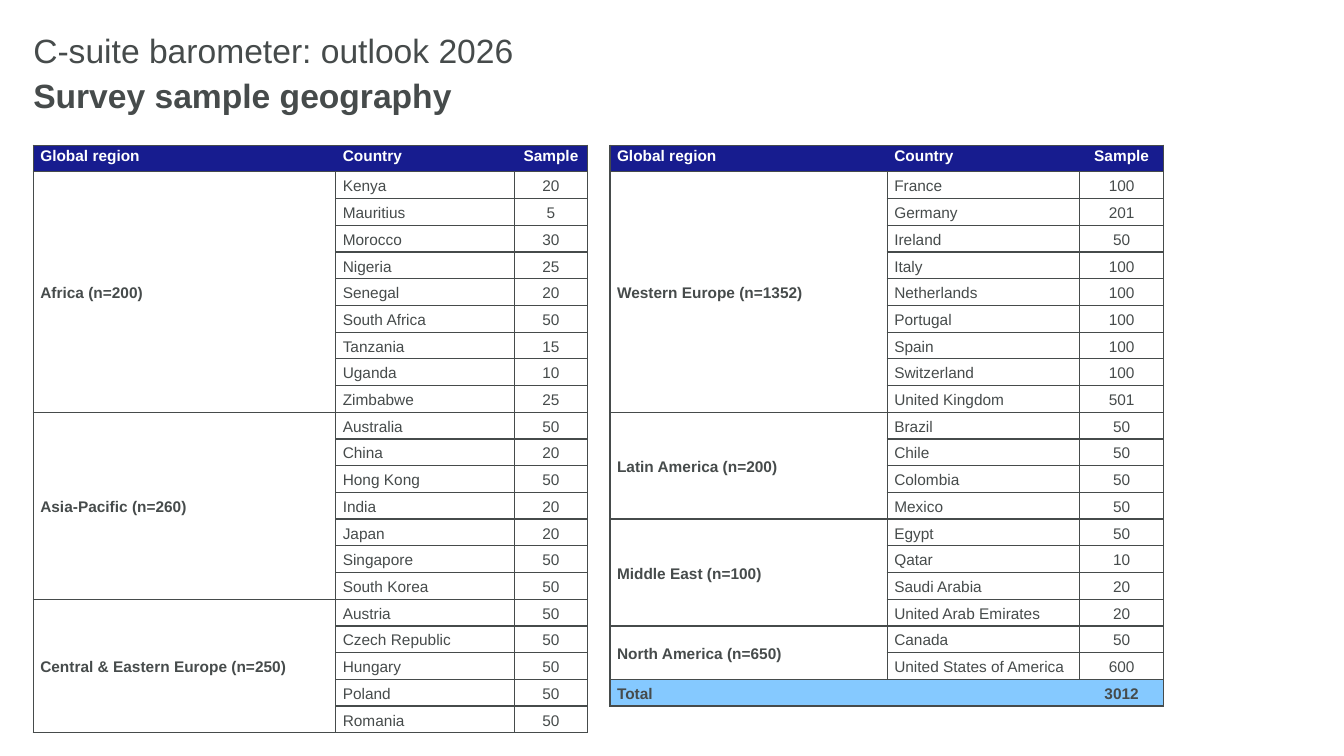
from lxml.etree import SubElement
from pptx import Presentation
from pptx.dml.color import RGBColor
from pptx.enum.text import MSO_ANCHOR, PP_ALIGN
from pptx.oxml.ns import qn
from pptx.util import Inches, Pt

COLORS = {"text": "464B4B", "navy": "171C8F", "sky": "85C9FF", "white": "FFFFFF"}
HEADERS = ("Global region", "Country", "Sample")

LEFT_REGIONS = {
    "Africa (n=200)": {
        "Kenya": 20, "Mauritius": 5, "Morocco": 30, "Nigeria": 25, "Senegal": 20,
        "South Africa": 50, "Tanzania": 15, "Uganda": 10, "Zimbabwe": 25},
    "Asia-Pacific (n=260)": {
        "Australia": 50, "China": 20, "Hong Kong": 50, "India": 20, "Japan": 20,
        "Singapore": 50, "South Korea": 50},
    "Central & Eastern Europe (n=250)": {
        "Austria": 50, "Czech Republic": 50, "Hungary": 50, "Poland": 50,
        "Romania": 50},
}
RIGHT_REGIONS = {
    "Western Europe (n=1352)": {
        "France": 100, "Germany": 201, "Ireland": 50, "Italy": 100,
        "Netherlands": 100, "Portugal": 100, "Spain": 100, "Switzerland": 100,
        "United Kingdom": 501},
    "Latin America (n=200)": {"Brazil": 50, "Chile": 50, "Colombia": 50, "Mexico": 50},
    "Middle East (n=100)": {
        "Egypt": 50, "Qatar": 10, "Saudi Arabia": 20, "United Arab Emirates": 20},
    "North America (n=650)": {"Canada": 50, "United States of America": 600},
}


def write(tf, text, size=11, color="text", bold=False, align=PP_ALIGN.LEFT, spacing=1.15):
    p = tf.paragraphs[0]
    p.alignment = align
    p.line_spacing = spacing
    r = p.add_run()
    r.text = text
    r.font.name = "Arial"
    r.font.size = Pt(size)
    r.font.bold = bold
    r.font.color.rgb = RGBColor.from_string(COLORS[color])


def add_heading(s, left, top, width, height, text, **fmt):
    tf = s.shapes.add_textbox(
        Inches(left), Inches(top), Inches(width), Inches(height)).text_frame
    tf.word_wrap = True
    tf.vertical_anchor = MSO_ANCHOR.MIDDLE
    tf.margin_left = tf.margin_right = tf.margin_top = tf.margin_bottom = 0
    write(tf, text, size=24, **fmt)


def style_cell(cell, fill, sides, anchor):
    cell.margin_left = cell.margin_right = Inches(0.07)
    cell.margin_top = cell.margin_bottom = 0
    cell.vertical_anchor = anchor
    # Borders come before the fill in the cell properties
    tc_pr = cell._tc.get_or_add_tcPr()
    for side in "LRTB":
        ln = SubElement(tc_pr, qn(f"a:ln{side}"), w=str(Pt(1)))
        if side in sides:
            solid = SubElement(ln, qn("a:solidFill"))
            SubElement(solid, qn("a:srgbClr"), val=COLORS["text"])
        else:
            SubElement(ln, qn("a:noFill"))
    cell.fill.solid()
    cell.fill.fore_color.rgb = RGBColor.from_string(COLORS[fill])


def add_sample_table(s, left, top, width, height, col_widths, regions, total=None):
    last = sum(len(countries) for countries in regions.values()) + 1
    n_rows = last + (total is not None)
    table = s.shapes.add_table(n_rows, 3, Inches(left), Inches(top),
                               Inches(width), Inches(height)).table
    for column, col_width in zip(table.columns, col_widths):
        column.width = Inches(col_width)

    # Fills and borders: header and total rows have no inner verticals
    for row in range(n_rows):
        band = {0: "navy", last: "sky"}.get(row)
        for col, band_sides in enumerate(("LTB", "TB", "RTB")):
            style_cell(table.cell(row, col), band or "white",
                       band_sides if band else "LRTB",
                       MSO_ANCHOR.MIDDLE if row else MSO_ANCHOR.TOP)

    def put(row, col, text, **fmt):
        align = PP_ALIGN.CENTER if col == 2 else PP_ALIGN.LEFT
        write(table.cell(row, col).text_frame, str(text), align=align, **fmt)

    # Header row
    for col, header in enumerate(HEADERS):
        put(0, col, header, color="white", bold=True)

    # One merged region cell beside its countries
    row = 1
    for region, countries in regions.items():
        table.cell(row, 0).merge(table.cell(row + len(countries) - 1, 0))
        put(row, 0, region, bold=True)
        for country, sample in countries.items():
            put(row, 1, country)
            put(row, 2, sample)
            row += 1

    # Total row
    if total is not None:
        table.cell(last, 0).merge(table.cell(last, 1))
        put(last, 0, "Total", bold=True)
        put(last, 2, total, bold=True)


def main():
    prs = Presentation()
    prs.slide_width, prs.slide_height = Inches(13.33), Inches(7.5)
    s = prs.slides.add_slide(prs.slide_layouts[6])

    # Title and subtitle
    add_heading(s, 0.33, 0.33, 6.18, 0.39, "C-suite barometer: outlook 2026", spacing=0.9)
    add_heading(s, 0.33, 0.74, 6.18, 0.39, "Survey sample geography", bold=True, spacing=1.05)

    # Sample tables
    add_sample_table(s, 0.33, 1.44, 5.5, 5.83, (3, 1.77, 0.73), LEFT_REGIONS)
    add_sample_table(s, 6.05, 1.44, 5.49, 5.57, (2.75, 1.91, 0.83), RIGHT_REGIONS, total=3012)

    prs.save("out.pptx")


if __name__ == "__main__":
    main()
